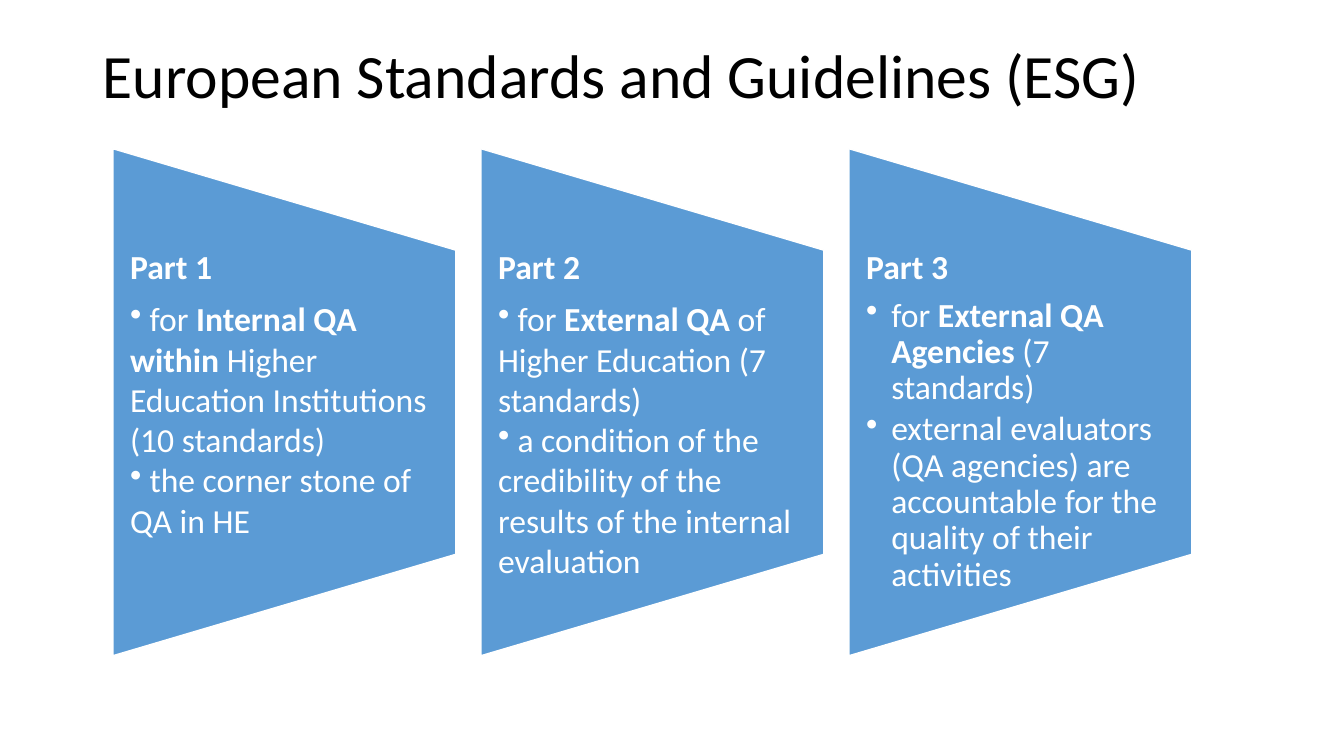
from lxml import etree
from pptx import Presentation
from pptx.dml.color import RGBColor
from pptx.enum.shapes import MSO_SHAPE
from pptx.enum.text import MSO_ANCHOR
from pptx.oxml.ns import qn
from pptx.util import Inches, Pt

PANEL_SHAPE = MSO_SHAPE.FLOWCHART_MANUAL_OPERATION
TOP = MSO_ANCHOR.TOP

# Content: heading, bullets as (text, bold) runs, bullet style
TITLE = "European Standards and Guidelines (ESG)"
PARTS = [
    ("Part 1", [
        [(" for ", False), ("Internal QA within ", True),
         ("Higher Education Institutions (10 standards)", False)],
        [(" the corner stone of QA in HE", False)],
    ], "inline"),
    ("Part 2", [
        [(" for ", False), ("External QA ", True),
         ("of Higher Education (7 standards)", False)],
        [(" a condition of the credibility of the results of the internal evaluation", False)],
    ], "inline"),
    ("Part 3", [
        [("for ", False), ("External QA Agencies ", True), ("(7 standards)", False)],
        [("external evaluators (QA agencies) are accountable for the quality of their activities",
          False)],
    ], "hanging"),
]

# Look
COLORS = {"title": "000000", "panel": "5B9BD5", "light": "FFFFFF"}
FONT = "Calibri"
TITLE_SIZE, BODY_SIZE = 44, 24
HEADING = {"line_spacing": 0.9, "space_after": Pt(0.35 * BODY_SIZE)}
BULLETS = {
    "inline": ({"line_spacing": 1.0, "space_after": Pt(0)}, 0),
    "hanging": ({"line_spacing": 0.9, "space_after": Pt(0.15 * BODY_SIZE)}, 0.25),
}

# Grid, in inches
SLIDE_WIDTH, SLIDE_HEIGHT = 13.33, 7.5
TITLE_BOX = (0.92, 0.4, 11.5, 1.45)
FIRST_LEFT, PITCH = 1.12, 3.65
PANEL_WIDTH, PANEL_HEIGHT, PANEL_MIDDLE = 3.4, 5.03, 3.99
TEXT_HEIGHT = PANEL_HEIGHT * 0.6
TEXT_INSET = 0.17


def color(name):
    return RGBColor.from_string(COLORS[name])


def apply(target, values):
    for name, value in values.items():
        setattr(target, name, value)


def add_text_frame(slide, box, margins):
    frame = slide.shapes.add_textbox(*map(Inches, box)).text_frame
    apply(frame, {"word_wrap": True, "vertical_anchor": TOP})
    apply(frame, margins)
    return frame


def add_run(paragraph, text, size, color_name, bold=False):
    run = paragraph.add_run()
    run.text = text
    apply(run.font, {"name": FONT, "size": Pt(size), "bold": bold})
    run.font.color.rgb = color(color_name)


def add_bullet(paragraph, indent):
    properties = paragraph._p.get_or_add_pPr()
    properties.set("marL", str(Inches(indent)))
    properties.set("indent", str(-Inches(indent)))
    etree.SubElement(properties, qn("a:buChar")).set("char", "•")


def add_panel(slide, left):
    # The preset is drawn lying down, then turned about its centre
    panel = slide.shapes.add_shape(
        PANEL_SHAPE,
        Inches(left + (PANEL_WIDTH - PANEL_HEIGHT) / 2),
        Inches(PANEL_MIDDLE - PANEL_WIDTH / 2),
        Inches(PANEL_HEIGHT), Inches(PANEL_WIDTH))
    panel.rotation = 270
    panel.shadow.inherit = False
    panel.fill.solid()
    panel.fill.fore_color.rgb = color("panel")
    panel.line.color.rgb = color("light")
    panel.line.width = Pt(1)


def add_part(slide, left, heading, bullets, style):
    add_panel(slide, left)
    box = (left, PANEL_MIDDLE - TEXT_HEIGHT / 2, PANEL_WIDTH, TEXT_HEIGHT)
    frame = add_text_frame(slide, box, {
        "margin_left": Inches(TEXT_INSET), "margin_right": Inches(TEXT_INSET),
        "margin_top": 0, "margin_bottom": 0})
    apply(frame.paragraphs[0], HEADING)
    add_run(frame.paragraphs[0], heading, BODY_SIZE, "light", True)
    spacing, indent = BULLETS[style]
    for runs in bullets:
        paragraph = frame.add_paragraph()
        apply(paragraph, spacing)
        add_bullet(paragraph, indent)
        for text, bold in runs:
            add_run(paragraph, text, BODY_SIZE, "light", bold)


def main():
    presentation = Presentation()
    presentation.slide_width = Inches(SLIDE_WIDTH)
    presentation.slide_height = Inches(SLIDE_HEIGHT)
    slide = presentation.slides.add_slide(presentation.slide_layouts[6])

    # Title
    title = add_text_frame(slide, TITLE_BOX, {}).paragraphs[0]
    title.line_spacing = 0.9
    add_run(title, TITLE, TITLE_SIZE, "title")

    # Three parts, left to right
    for column, part in enumerate(PARTS):
        add_part(slide, FIRST_LEFT + column * PITCH, *part)

    presentation.save("out.pptx")


if __name__ == "__main__":
    main()
